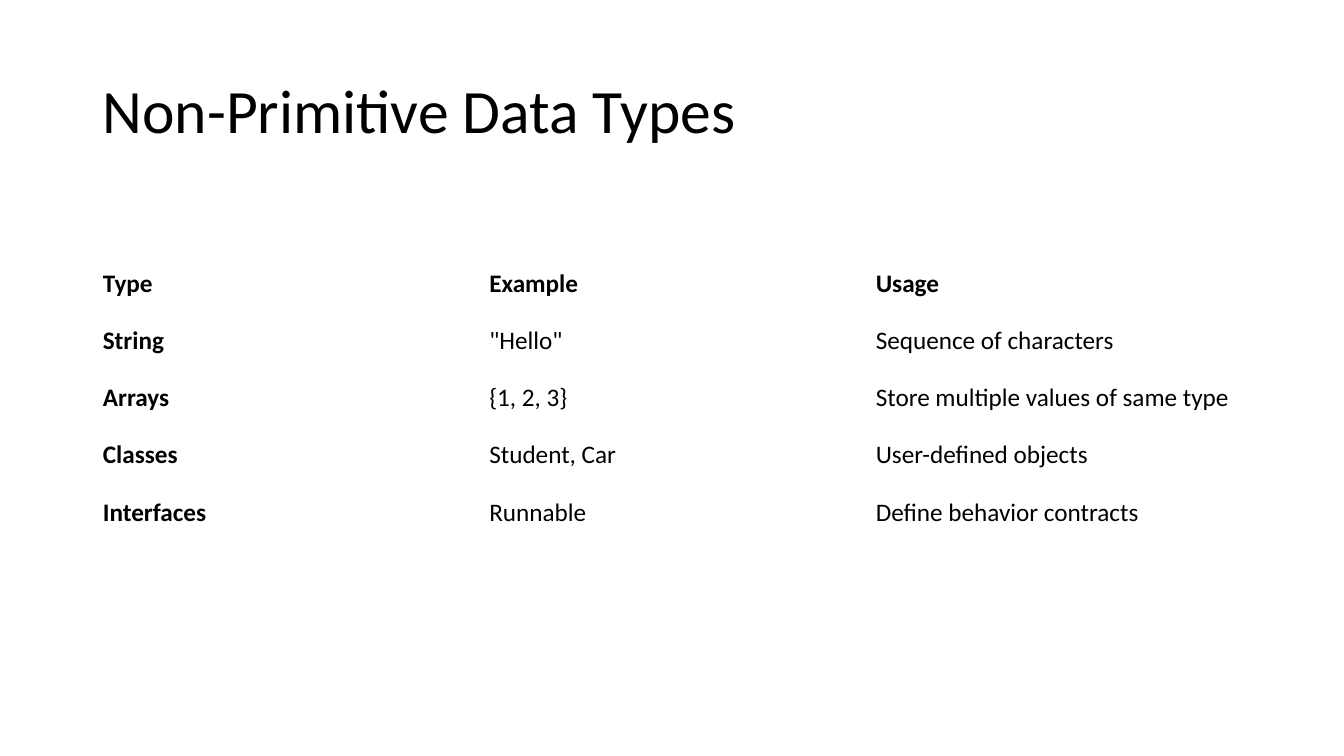
from pptx import Presentation
from pptx.dml.color import RGBColor
from pptx.enum.text import MSO_ANCHOR
from pptx.util import Inches, Pt

TITLE = "Non-Primitive Data Types"
ROWS = [
    ("Type", "Example", "Usage"),
    ("String", '"Hello"', "Sequence of characters"),
    ("Arrays", "{1, 2, 3}", "Store multiple values of same type"),
    ("Classes", "Student, Car", "User-defined objects"),
    ("Interfaces", "Runnable", "Define behavior contracts"),
]
COLORS = {"text": "000000"}
FONT = "Calibri"
MIDDLE = MSO_ANCHOR.MIDDLE

WIDTH, HEIGHT = 13.33, 7.5
LEFT = 0.92
CONTENT_WIDTH = 11.5
TITLE_TOP, TITLE_HEIGHT = 0.4, 1.45
TABLE_TOP, TABLE_HEIGHT = 2.53, 2.84


def write_text(frame, text, size, bold=False, line_spacing=None):
    frame.word_wrap = True
    para = frame.paragraphs[0]
    para.line_spacing = line_spacing
    span = para.add_run()
    span.text = text
    span.font.name = FONT
    span.font.size = Pt(size)
    span.font.bold = bold
    span.font.color.rgb = RGBColor.from_string(COLORS["text"])


def add_title(page):
    box = page.shapes.add_textbox(
        Inches(LEFT), Inches(TITLE_TOP), Inches(CONTENT_WIDTH), Inches(TITLE_HEIGHT))
    box.text_frame.vertical_anchor = MIDDLE
    write_text(box.text_frame, TITLE, size=44, line_spacing=0.9)


def add_type_table(page):
    table = page.shapes.add_table(
        len(ROWS), len(ROWS[0]), Inches(LEFT), Inches(TABLE_TOP),
        Inches(CONTENT_WIDTH), Inches(TABLE_HEIGHT)).table
    table.first_row = False
    table.horz_banding = False
    for row, texts in enumerate(ROWS):
        for column, text in enumerate(texts):
            cell = table.cell(row, column)
            cell.fill.background()
            cell.vertical_anchor = MIDDLE
            write_text(cell.text_frame, text, size=18, bold=row == 0 or column == 0)


def main():
    deck = Presentation()
    deck.slide_width = Inches(WIDTH)
    deck.slide_height = Inches(HEIGHT)
    page = deck.slides.add_slide(deck.slide_layouts[6])
    add_title(page)
    add_type_table(page)
    deck.save("out.pptx")


if __name__ == "__main__":
    main()
